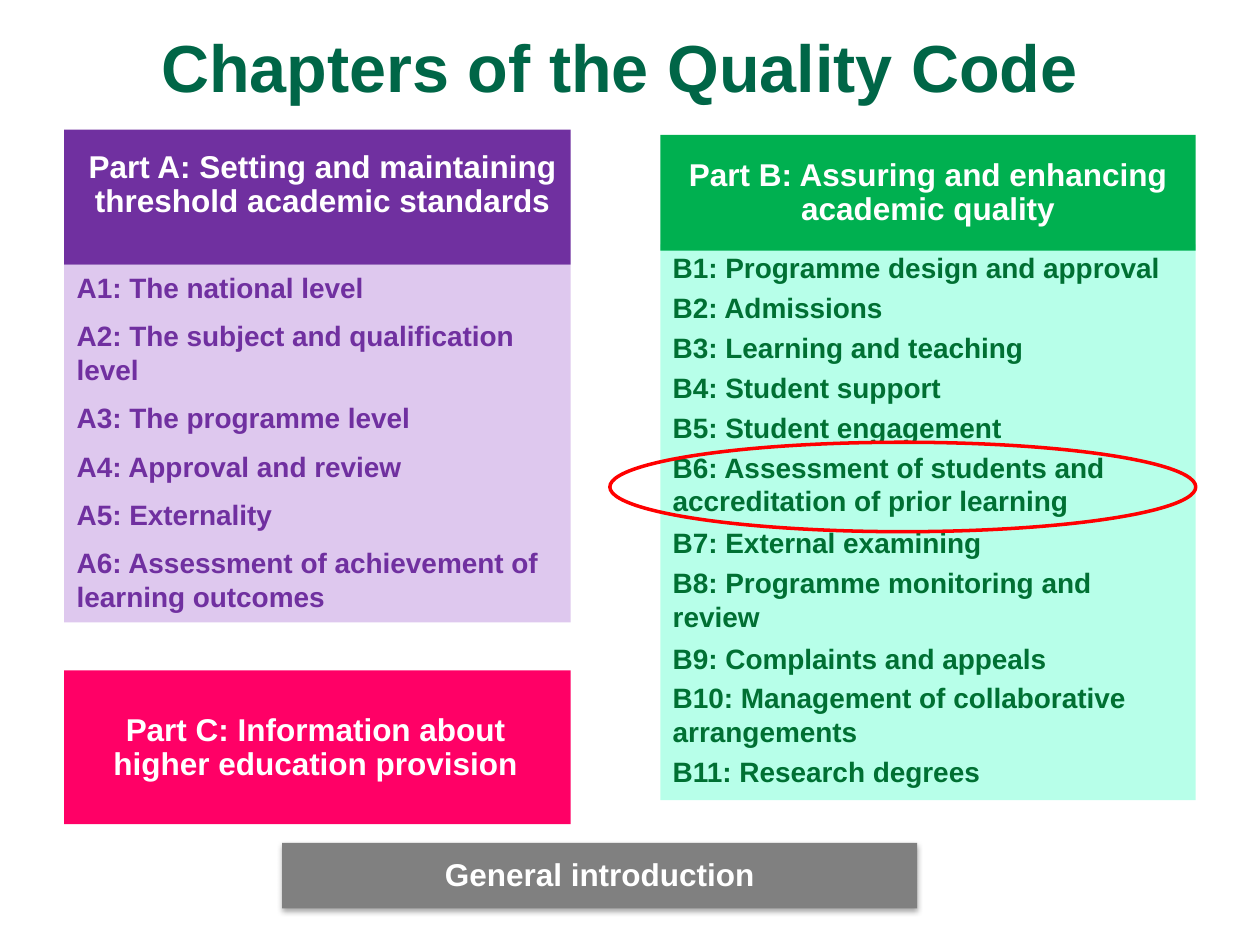
from dataclasses import dataclass

from lxml.etree import SubElement
from pptx import Presentation
from pptx.dml.color import RGBColor
from pptx.enum.shapes import MSO_SHAPE
from pptx.enum.text import MSO_ANCHOR, MSO_AUTO_SIZE, PP_ALIGN
from pptx.oxml.ns import qn
from pptx.util import Inches, Pt


@dataclass(frozen=True)
class Theme:
    font: str = "Arial"
    title: str = "006647"
    white: str = "FFFFFF"
    purple: str = "7030A0"
    lilac: str = "DEC8EE"
    green: str = "00B050"
    mint: str = "B7FFE9"
    dark_green: str = "007033"
    pink: str = "FF0066"
    grey: str = "808080"
    highlight: str = "FF0000"
    title_size: int = 38
    heading_size: int = 18
    chapter_size: int = 16


@dataclass(frozen=True)
class Box:
    left: float
    top: float
    width: float
    height: float

    def inner(self, dx, dy, width, height):
        return Box(self.left + dx, self.top + dy, width, height)

    def lengths(self):
        return [Inches(n) for n in (self.left, self.top, self.width, self.height)]


THEME = Theme()
TIGHT = {
    "margin_left": Inches(0.04),
    "margin_right": Inches(0.04),
    "margin_top": Inches(0.02),
    "margin_bottom": Inches(0.02),
}
CENTRED = {"alignment": PP_ALIGN.CENTER}
HEADING = CENTRED | {"line_spacing": 0.9}

PART_A = [
    "A1: The national level",
    "A2: The subject and qualification level",
    "A3: The programme level",
    "A4: Approval and review",
    "A5: Externality",
    "A6: Assessment of achievement of learning outcomes",
]
PART_B = [
    "B1: Programme design and approval",
    "B2: Admissions",
    "B3: Learning and teaching",
    "B4: Student support",
    "B5: Student engagement",
    "B6: Assessment of students and accreditation of prior learning",
    "B7: External examining",
    "B8: Programme monitoring and review",
    "B9: Complaints and appeals",
    "B10: Management of collaborative arrangements",
    "B11: Research degrees",
]
WIDER_GAPS = ("B7", "B9")


def apply(target, formats):
    for name, value in formats.items():
        setattr(target, name, value)


def write(frame, lines, size, color, paragraph_format, frame_format):
    apply(frame, {"word_wrap": True, "auto_size": MSO_AUTO_SIZE.NONE} | frame_format)
    for index, line in enumerate(lines):
        paragraph = frame.paragraphs[0] if index == 0 else frame.add_paragraph()
        paragraph.text = line
        apply(paragraph, paragraph_format)
        apply(paragraph.font, {"name": THEME.font, "size": Pt(size), "bold": True})
        paragraph.font.color.rgb = RGBColor.from_string(color)


def panel(shapes, box, fill):
    block = shapes.add_shape(MSO_SHAPE.RECTANGLE, *box.lengths())
    block.shadow.inherit = False
    block.fill.solid()
    block.fill.fore_color.rgb = RGBColor.from_string(fill)
    block.line.fill.background()
    return block


def heading(holder, label):
    write(holder.text_frame, [label], THEME.heading_size, THEME.white, HEADING,
          TIGHT | {"vertical_anchor": MSO_ANCHOR.MIDDLE})


def chapters(slide, box, names, fill, color, gap):
    frame = panel(slide.shapes, box, fill).text_frame
    write(frame, names, THEME.chapter_size, color, {"alignment": PP_ALIGN.LEFT},
          {"vertical_anchor": MSO_ANCHOR.TOP})
    for paragraph in frame.paragraphs[1:]:
        wider = paragraph.text.startswith(WIDER_GAPS)
        paragraph.space_before = Pt(gap + 1.2 if wider else gap)


def title(slide, box):
    holder = slide.shapes.title
    apply(holder, dict(zip(("left", "top", "width", "height"), box.lengths())))
    write(holder.text_frame, ["Chapters of the Quality Code"], THEME.title_size,
          THEME.title, CENTRED, {"vertical_anchor": MSO_ANCHOR.MIDDLE})


def part_a(slide, box):
    chapters(slide, box.inner(0, 1.07, box.width, 2.84), PART_A,
             THEME.lilac, THEME.purple, 8.4)
    group = slide.shapes.add_group_shape()
    panel(group.shapes, box.inner(0, 0, box.width, 1.07), THEME.purple)
    label = group.shapes.add_textbox(*box.inner(0.08, -0.19, 3.94, 1.26).lengths())
    heading(label, "Part A: Setting and maintaining threshold academic standards")


def part_b(slide, box):
    chapters(slide, box.inner(0, 0.87, box.width, 4.41), PART_B,
             THEME.mint, THEME.dark_green, 3.6)
    heading(panel(slide.shapes, box.inner(0, 0, box.width, 0.92), THEME.green),
            "Part B: Assuring and enhancing academic quality")


def part_c(slide, box):
    group = slide.shapes.add_group_shape()
    panel(group.shapes, box, THEME.pink)
    label = panel(group.shapes, box.inner(0.21, 0.07, 3.57, 1.09), THEME.pink)
    heading(label, "Part C: Information about higher education provision")


def general_introduction(slide, box):
    bar = panel(slide.shapes, box, THEME.grey)
    effects = bar._element.spPr.find(qn("a:effectLst"))
    shadow = SubElement(effects, qn("a:outerShdw"), blurRad=str(Pt(3.1)),
                        dist=str(Pt(1.8)), dir="5400000", rotWithShape="0")
    black = SubElement(shadow, qn("a:srgbClr"), val="000000")
    SubElement(black, qn("a:alpha"), val="35000")
    label = slide.shapes.add_textbox(*box.inner(0.63, 0.05, 3.78, 0.4).lengths())
    write(label.text_frame, ["General introduction"], THEME.heading_size,
          THEME.white, CENTRED, {})


def highlight(slide, box):
    ring = slide.shapes.add_shape(MSO_SHAPE.OVAL, *box.lengths())
    ring.shadow.inherit = False
    ring.fill.background()
    ring.line.color.rgb = RGBColor.from_string(THEME.highlight)
    ring.line.width = Pt(2)


def main():
    deck = Presentation()
    apply(deck, {"slide_width": Inches(10), "slide_height": Inches(7.5)})
    slide = deck.slides.add_slide(deck.slide_layouts[5])
    title(slide, Box(0.67, 0.21, 8.5, 0.63))
    part_a(slide, Box(0.51, 1.03, 4.02, 3.91))
    part_b(slide, Box(5.24, 1.07, 4.25, 5.28))
    part_c(slide, Box(0.51, 5.32, 4.02, 1.22))
    general_introduction(slide, Box(2.24, 6.69, 5.04, 0.52))
    highlight(slide, Box(4.84, 3.51, 4.65, 0.71))
    deck.save("out.pptx")


if __name__ == "__main__":
    main()
